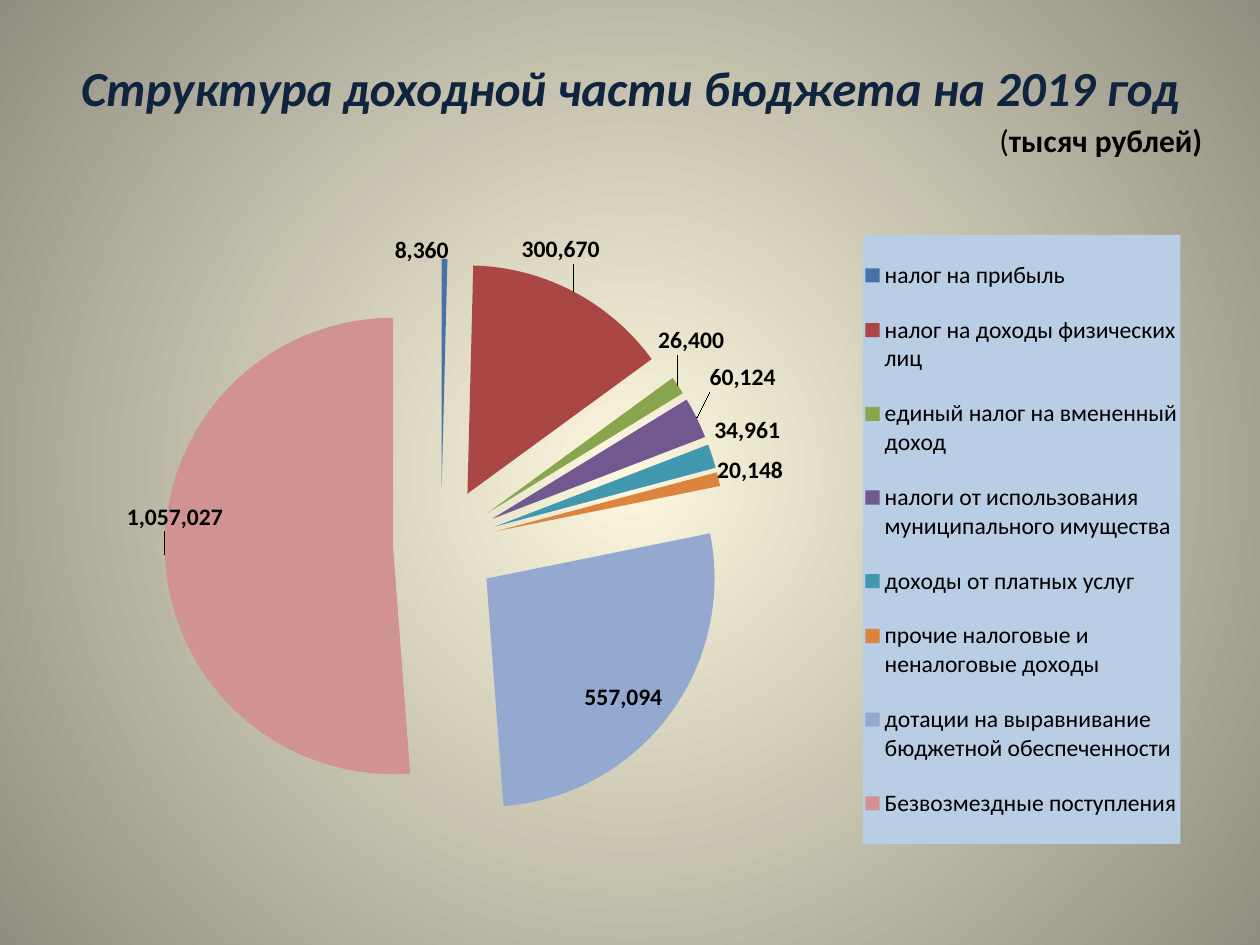
from lxml import etree
from pptx import Presentation
from pptx.chart.data import CategoryChartData
from pptx.dml.color import RGBColor
from pptx.enum.chart import XL_CHART_TYPE, XL_LABEL_POSITION, XL_LEGEND_POSITION
from pptx.enum.text import MSO_ANCHOR, PP_ALIGN
from pptx.oxml import parse_xml
from pptx.oxml.ns import nsdecls, qn
from pptx.util import Pt

PIE = XL_CHART_TYPE.PIE
INSIDE_END = XL_LABEL_POSITION.INSIDE_END
LEGEND_RIGHT = XL_LEGEND_POSITION.RIGHT
CENTER, LEFT = PP_ALIGN.CENTER, PP_ALIGN.LEFT
MIDDLE = MSO_ANCHOR.MIDDLE

NAVY = RGBColor(0x0F, 0x24, 0x3E)
BLACK = RGBColor(0x00, 0x00, 0x00)
CREAM = RGBColor(0xFC, 0xF7, 0xDD)
OLIVE_GRAY = RGBColor(0x91, 0x8E, 0x81)
LEGEND_BLUE = RGBColor(0xB9, 0xCD, 0xE5)
BLUE = RGBColor(0x45, 0x72, 0xA7)
RED = RGBColor(0xAA, 0x46, 0x43)
GREEN = RGBColor(0x89, 0xA5, 0x4E)
PURPLE = RGBColor(0x71, 0x58, 0x8F)
TEAL = RGBColor(0x41, 0x98, 0xAF)
ORANGE = RGBColor(0xDB, 0x84, 0x3D)
PALE_BLUE = RGBColor(0x93, 0xA9, 0xCF)
PINK = RGBColor(0xD1, 0x93, 0x92)

# Source of income, amount, slice colour, label shift in points
INCOME = [
    ("налог на прибыль", 8360, BLUE, (-13, -17)),
    ("налог на доходы физических лиц", 300670, RED, (17, -36)),
    ("единый налог на вмененный доход", 26400, GREEN, (30, -36)),
    ("налоги от использования муниципального имущества", 60124, PURPLE, (49, -33)),
    ("доходы от платных услуг", 34961, TEAL, (43, -24)),
    ("прочие налоговые и неналоговые доходы", 20148, ORANGE, (41, -14)),
    ("дотации на выравнивание бюджетной обеспеченности", 557094, PALE_BLUE, None),
    ("Безвозмездные поступления", 1057027, PINK, (-26, -21)),
]
CHART_WIDTH, CHART_HEIGHT = 648, 356.4
CHART_TEXT_SIZE = 13.5
EXPLOSION = 25
GRANTS_EXPLOSION = 21


def format_font(font, size, color=BLACK, bold=False, italic=False, name="Calibri"):
    font.name, font.size = name, Pt(size)
    font.bold, font.italic = bold, italic
    font.color.rgb = color


def write(frame, *runs, align=LEFT, **style):
    """Fill a text frame with one paragraph of (text, own format) runs."""
    frame.word_wrap = True
    paragraph = frame.paragraphs[0]
    paragraph.alignment = align
    for text, own_style in runs:
        run = paragraph.add_run()
        run.text = text
        format_font(run.font, **{**style, **own_style})


def manual_layout(*modes, **lengths):
    """Chart layout element from (tag, mode) pairs and lengths in points."""
    layout = parse_xml(f"<c:layout {nsdecls('c')}><c:manualLayout/></c:layout>")
    shares = [(tag, length / (CHART_WIDTH if tag in "xw" else CHART_HEIGHT))
              for tag, length in lengths.items()]
    for tag, value in [*modes, *shares]:
        etree.SubElement(layout[0], qn(f"c:{tag}")).set("val", str(value))
    return layout


FROM_EDGES = (("xMode", "edge"), ("yMode", "edge"))


def explosion(percent):
    return parse_xml(f'<c:explosion {nsdecls("c")} val="{percent}"/>')


class BudgetSlide:
    def __init__(self, presentation):
        self.slide = presentation.slides.add_slide(presentation.slide_layouts[5])

    def radial_background(self, inner, outer):
        fill = self.slide.background.fill
        fill.gradient()
        for stop, color in zip(fill.gradient_stops, (inner, outer)):
            stop.color.rgb = color
        linear = self.slide.element.find(f".//{qn('a:lin')}")
        linear.getparent().replace(linear, parse_xml(
            f'<a:path {nsdecls("a")} path="circle">'
            '<a:fillToRect l="50000" t="50000" r="50000" b="50000"/></a:path>'))

    def title(self, text, left, top, width, height):
        title = self.slide.shapes.title
        title.left, title.top = Pt(left), Pt(top)
        title.width, title.height = Pt(width), Pt(height)
        title.text_frame.vertical_anchor = MIDDLE
        write(title.text_frame, (text, {}), align=CENTER,
              size=28, color=NAVY, bold=True, italic=True)

    def text(self, runs, left, top, width, height, **style):
        box = self.slide.shapes.add_textbox(Pt(left), Pt(top), Pt(width), Pt(height))
        write(box.text_frame, *runs, **style)

    def pie(self, income, left, top):
        names, amounts, colors, shifts = zip(*income)
        data = CategoryChartData(number_format="#,##0")
        data.categories = names
        data.add_series("Series 1", amounts)
        chart = self.slide.shapes.add_chart(
            PIE, Pt(left), Pt(top), Pt(CHART_WIDTH), Pt(CHART_HEIGHT), data).chart
        chart.has_title = False
        format_font(chart.font, 18)
        chart.plots[0].vary_by_categories = True
        self.slices(chart, colors)
        self.labels(chart, shifts)
        self.legend(chart)
        plot_area = chart.element.find(f".//{qn('c:plotArea')}")
        for old_layout in plot_area.findall(qn("c:layout")):
            plot_area.remove(old_layout)
        plot_area.insert(0, manual_layout(
            ("layoutTarget", "inner"), *FROM_EDGES, x=15, y=22, w=402, h=326))

    def slices(self, chart, colors):
        points = chart.plots[0].series[0].points
        for index, color in enumerate(colors):
            fill = points[index].format.fill
            fill.solid()
            fill.fore_color.rgb = color
        slices = chart.element.findall(f".//{qn('c:dPt')}")
        slices[0].addprevious(explosion(EXPLOSION))
        for piece in slices:
            is_last = piece is slices[-1]
            percent = GRANTS_EXPLOSION if is_last else EXPLOSION
            piece.find(qn("c:spPr")).addprevious(explosion(percent))

    def labels(self, chart, shifts):
        series = chart.plots[0].series[0]
        labels = series.data_labels
        labels.show_value = True
        labels.number_format, labels.number_format_is_linked = "#,##0", False
        labels.position = INSIDE_END
        format_font(labels.font, CHART_TEXT_SIZE, bold=True)
        moved = [(index, shift) for index, shift in enumerate(shifts) if shift]
        for index, _ in moved:
            label = series.points[index].data_label
            format_font(label.font, CHART_TEXT_SIZE, bold=True)
            label.position = INSIDE_END
        label_elements = chart.element.findall(f".//{qn('c:dLbl')}")
        for element, (_, (x, y)) in zip(label_elements, moved):
            element.insert(1, manual_layout(x=x, y=y))

    def legend(self, chart):
        chart.has_legend = True
        legend = chart.legend
        legend.position = LEGEND_RIGHT
        legend.include_in_layout = False
        format_font(legend.font, CHART_TEXT_SIZE)
        element = chart.element.find(f".//{qn('c:legend')}")
        for old_layout in element.findall(qn("c:layout")):
            element.remove(old_layout)
        element.find(qn("c:legendPos")).addnext(manual_layout(
            *FROM_EDGES, x=457, y=8.3, w=181.5, h=348))
        element.find(qn("c:txPr")).addprevious(parse_xml(
            f'<c:spPr {nsdecls("c", "a")}><a:solidFill>'
            f'<a:srgbClr val="{LEGEND_BLUE}"/></a:solidFill></c:spPr>'))


def main():
    presentation = Presentation()
    presentation.slide_width, presentation.slide_height = Pt(720), Pt(540)
    budget = BudgetSlide(presentation)
    budget.radial_background(CREAM, OLIVE_GRAY)
    budget.title("Структура доходной части бюджета на 2019 год", 36, 22, 648, 55.4)
    budget.pie(INCOME, 36, 126)
    budget.text([("(", {}), ("тысяч рублей)", {"bold": True})],
                564, 65.8, 136, 29, size=18)
    presentation.save("out.pptx")


if __name__ == "__main__":
    main()
